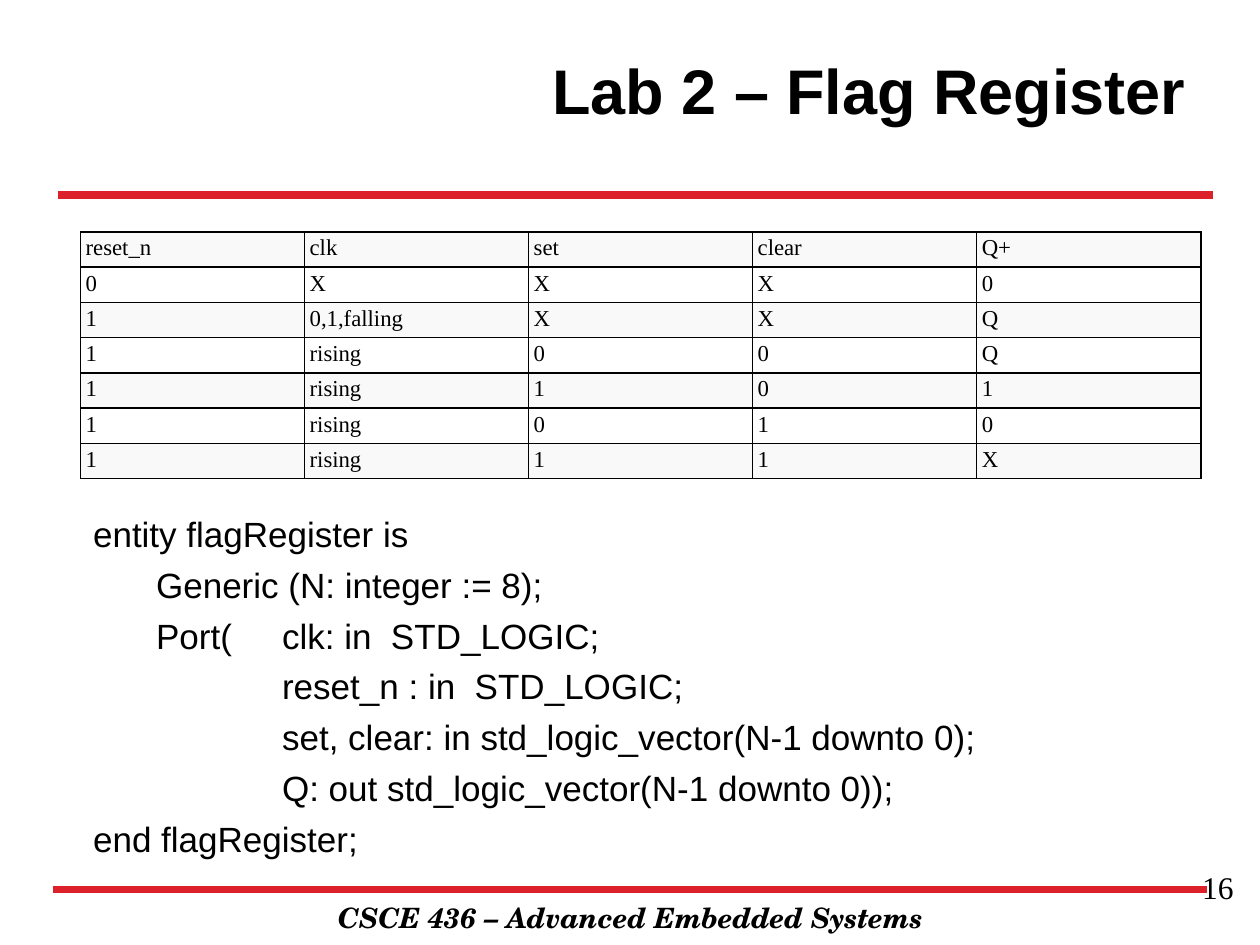
from dataclasses import dataclass

from lxml import etree
from pptx import Presentation
from pptx import util as u
from pptx.dml.color import RGBColor
from pptx.enum import shapes, text
from pptx.oxml import ns


@dataclass(frozen=True)
class Theme:
    ink: str = "000000"
    rule: str = "DD212B"
    band: str = "F9F9F9"
    paper: str = "FFFFFF"
    rule_width: float = 4.5
    border_width: float = 1


@dataclass(frozen=True)
class Style:
    font: str
    size: float
    bold: bool = False
    italic: bool = False


@dataclass(frozen=True)
class Box:
    """A place on the grid: columns and rows."""
    col: float
    row: float
    cols: float
    rows: float

    def lengths(self) -> tuple[int, int, int, int]:
        return (round(self.col * COL), round(self.row * ROW),
                round(self.cols * COL), round(self.rows * ROW))


@dataclass(frozen=True)
class Label:
    box: Box
    lines: tuple[str, ...]
    style: Style
    align: text.PP_ALIGN = text.PP_ALIGN.LEFT
    anchor: text.MSO_ANCHOR = text.MSO_ANCHOR.TOP
    gap: float = 0


THEME = Theme()
TITLE = Style("Arial", 36, bold=True)
CODE = Style("Arial", 20)
NUMBER = Style("Times New Roman", 18)
CELL = Style("Times New Roman", 13)
FOOTER = Style("TeX Gyre Schola", 16, bold=True, italic=True)

# Grid of 100 columns and 75 rows
WIDTH, HEIGHT = u.Inches(10), u.Inches(7.5)
COL, ROW = WIDTH / 100, HEIGHT / 75

RULES = (Box(4.2, 70.6, 91.6, 0), Box(4.6, 15.5, 91.7, 0))

LABELS = (
    Label(Box(14.2, 71, 71.7, 3.7), ("CSCE 436 – Advanced Embedded Systems",),
          FOOTER, text.PP_ALIGN.CENTER),
    Label(Box(20.9, 0.8, 74.2, 12.5), ("Lab 2 – Flag Register",),
          TITLE, text.PP_ALIGN.RIGHT, text.MSO_ANCHOR.MIDDLE),
    Label(Box(75.6, 68.4, 23.3, 5.2), ("16",), NUMBER, text.PP_ALIGN.RIGHT),
    Label(Box(6.4, 40.2, 88.9, 27.5), (
        "entity flagRegister is",
        "\tGeneric (N: integer := 8);",
        "\tPort(\tclk: in  STD_LOGIC;",
        "\t\t\treset_n : in  STD_LOGIC;",
        "\t\t\tset, clear: in std_logic_vector(N-1 downto 0);",
        "\t\t\tQ: out std_logic_vector(N-1 downto 0));",
        "end flagRegister;",
    ), CODE, gap=5),
)

TRUTH_BOX = Box(6.4, 18.4, 88.9, 19.6)
TRUTH_TABLE = (
    ("reset_n", "clk", "set", "clear", "Q+"),
    ("0", "X", "X", "X", "0"),
    ("1", "0,1,falling", "X", "X", "Q"),
    ("1", "rising", "0", "0", "Q"),
    ("1", "rising", "1", "0", "1"),
    ("1", "rising", "0", "1", "0"),
    ("1", "rising", "1", "1", "X"),
)


def color(value: str) -> RGBColor:
    return RGBColor.from_string(value)


def add_run(p, words: str, style: Style) -> None:
    r = p.add_run()
    r.text = words
    r.font.name, r.font.size = style.font, u.Pt(style.size)
    r.font.bold, r.font.italic = style.bold, style.italic
    r.font.color.rgb = color(THEME.ink)


def add_rule(s, box: Box) -> None:
    x, y, w, h = box.lengths()
    line = s.shapes.add_connector(shapes.MSO_CONNECTOR.STRAIGHT, x, y, x + w, y + h)
    line.line.color.rgb = color(THEME.rule)
    line.line.width = u.Pt(THEME.rule_width)
    etree.SubElement(line._element.spPr, ns.qn("a:effectLst"))


def add_label(s, label: Label) -> None:
    tf = s.shapes.add_textbox(*label.box.lengths()).text_frame
    tf.word_wrap = True
    tf.vertical_anchor = label.anchor
    for i, words in enumerate(label.lines):
        p = tf.add_paragraph() if i else tf.paragraphs[0]
        p.alignment = label.align
        if i:
            p.space_before = u.Pt(label.gap)
        add_run(p, words, label.style)


def add_borders(cell) -> None:
    """Border lines come before the fill in the cell properties."""
    props = cell._tc.get_or_add_tcPr()
    for i, side in enumerate(("lnL", "lnR", "lnT", "lnB")):
        ln = etree.Element(ns.qn(f"a:{side}"), w=str(u.Pt(THEME.border_width)))
        fill = etree.SubElement(ln, ns.qn("a:solidFill"))
        etree.SubElement(fill, ns.qn("a:srgbClr"), val=THEME.ink)
        props.insert(i, ln)


def add_table(s, box: Box, rows: tuple[tuple[str, ...], ...]) -> None:
    table = s.shapes.add_table(len(rows), len(rows[0]), *box.lengths()).table
    table.first_row = table.horz_banding = False
    for i, row in enumerate(rows):
        for j, words in enumerate(row):
            cell = table.cell(i, j)
            cell.margin_left = cell.margin_right = u.Inches(0.04)
            cell.margin_top = cell.margin_bottom = u.Inches(0.03)
            cell.fill.solid()
            cell.fill.fore_color.rgb = color(THEME.paper if i % 2 else THEME.band)
            add_borders(cell)
            add_run(cell.text_frame.paragraphs[0], words, CELL)


def main() -> None:
    prs = Presentation()
    prs.slide_width, prs.slide_height = WIDTH, HEIGHT
    s = prs.slides.add_slide(prs.slide_layouts[6])

    # Rules above and below the content
    for box in RULES:
        add_rule(s, box)

    # Footer, title, slide number and code
    for label in LABELS:
        add_label(s, label)

    # Truth table
    add_table(s, TRUTH_BOX, TRUTH_TABLE)

    prs.save("out.pptx")


if __name__ == "__main__":
    main()
